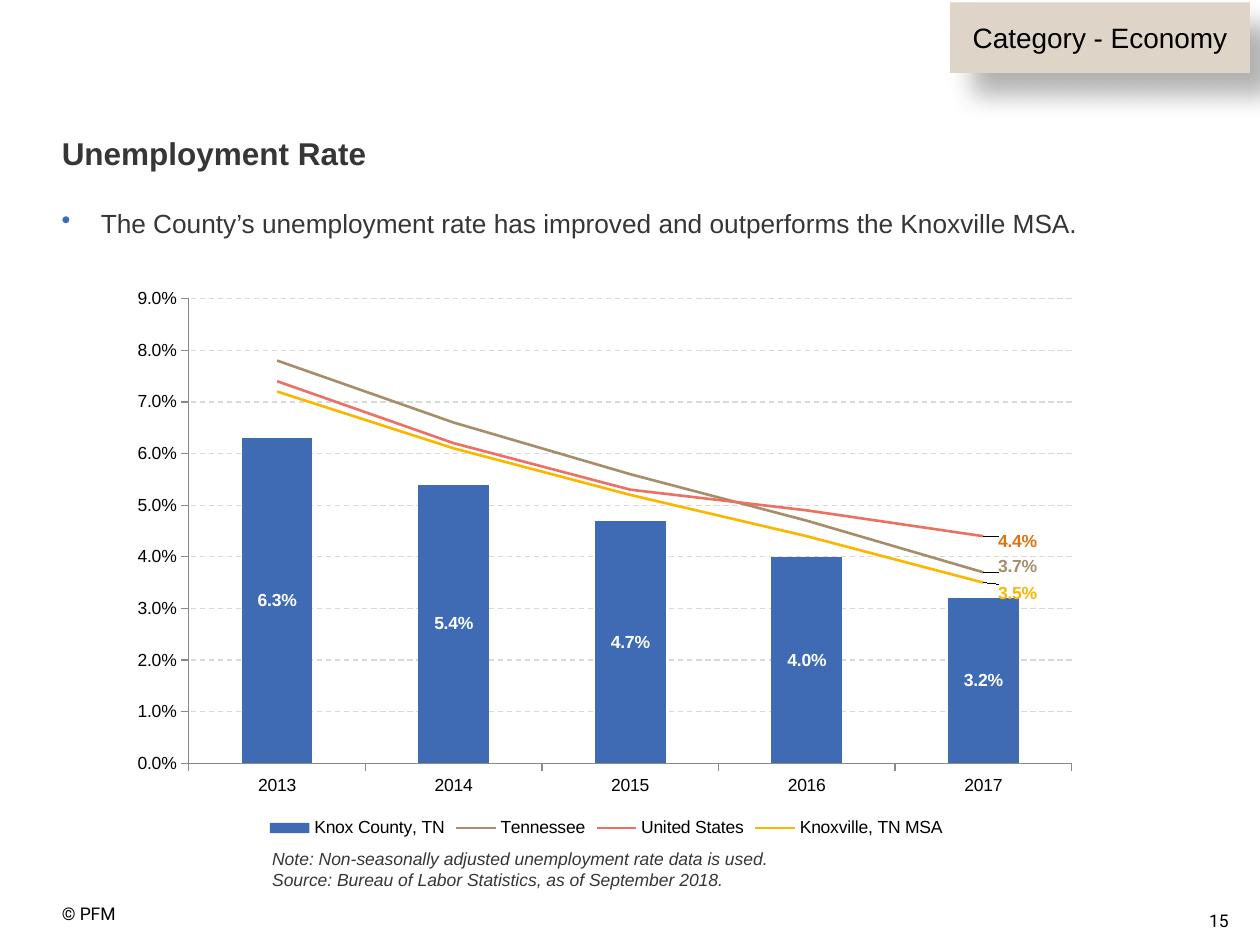
from dataclasses import dataclass

from lxml import etree
from pptx import Presentation
from pptx.chart.data import CategoryChartData
from pptx.dml.color import RGBColor
from pptx.enum.chart import XL_CHART_TYPE, XL_LABEL_POSITION, XL_LEGEND_POSITION, XL_TICK_MARK
from pptx.enum.dml import MSO_LINE
from pptx.enum.shapes import MSO_SHAPE
from pptx.enum.text import MSO_ANCHOR, PP_ALIGN
from pptx.oxml import parse_xml
from pptx.oxml.ns import nsdecls, qn
from pptx.util import Emu, Inches, Pt

STACKED = XL_CHART_TYPE.COLUMN_STACKED
LABEL_CENTER, LABEL_RIGHT = XL_LABEL_POSITION.CENTER, XL_LABEL_POSITION.RIGHT
LEGEND_BOTTOM = XL_LEGEND_POSITION.BOTTOM
TICK_OUTSIDE = XL_TICK_MARK.OUTSIDE
DASH = MSO_LINE.DASH
RECTANGLE = MSO_SHAPE.RECTANGLE
TOP, MIDDLE = MSO_ANCHOR.TOP, MSO_ANCHOR.MIDDLE
LEFT, CENTER, RIGHT = PP_ALIGN.LEFT, PP_ALIGN.CENTER, PP_ALIGN.RIGHT

BLACK = RGBColor(0x00, 0x00, 0x00)
WHITE = RGBColor(0xFF, 0xFF, 0xFF)
INK = RGBColor(0x37, 0x36, 0x37)
BLUE = RGBColor(0x3E, 0x6B, 0xB4)
TAN = RGBColor(0xA6, 0x8E, 0x6A)
CORAL = RGBColor(0xEA, 0x71, 0x63)
ORANGE = RGBColor(0xDE, 0x73, 0x0F)
YELLOW = RGBColor(0xFB, 0xB6, 0x00)
SAND = RGBColor(0xDE, 0xD5, 0xC8)
GRID_GREY = RGBColor(0xD9, 0xD9, 0xD9)
AXIS_GREY = RGBColor(0x89, 0x89, 0x89)

SLIDE_WIDTH, SLIDE_HEIGHT = Inches(10), Inches(7.5)
COLUMNS, ROWS = 100, 75
MARGIN = 4.9
PERCENT = "0.0%"


@dataclass(frozen=True)
class Area:
    """A place on the slide, in grid columns and rows."""
    column: float
    row: float
    columns: float
    rows: float

    def emu(self) -> tuple:
        across, down = SLIDE_WIDTH / COLUMNS, SLIDE_HEIGHT / ROWS
        return (Emu(round(self.column * across)), Emu(round(self.row * down)),
                Emu(round(self.columns * across)), Emu(round(self.rows * down)))


@dataclass(frozen=True)
class TextBlock:
    area: Area
    lines: tuple
    font: dict
    insets: tuple = (0, 0, 0, 0)
    align: PP_ALIGN = LEFT
    wrap: bool = True
    spacing: float = 1.0
    bullet: bool = False


@dataclass(frozen=True)
class Rate:
    name: str
    values: tuple
    color: RGBColor
    label_color: RGBColor
    label_shift: tuple = (0, 0)


def text_font(size: float, color: RGBColor = INK, name: str = "Arial", **extra) -> dict:
    return {"name": name, "size": Pt(size), "color": color, **extra}


def apply_font(font, values: dict) -> None:
    for key, value in values.items():
        if key == "color":
            font.color.rgb = value
        else:
            setattr(font, key, value)


YEARS = ("2013", "2014", "2015", "2016", "2017")
COUNTY = Rate("Knox County, TN", (0.063, 0.054, 0.047, 0.04, 0.032), BLUE, WHITE)
COMPARISONS = (
    Rate("Tennessee", (0.078, 0.066, 0.056, 0.047, 0.037), TAN, TAN, (0.01, -0.01)),
    Rate("United States", (0.074, 0.062, 0.053, 0.049, 0.044), CORAL, ORANGE, (0.01, 0.01)),
    Rate("Knoxville, TN MSA", (0.072, 0.061, 0.052, 0.044, 0.035), YELLOW, YELLOW, (0.01, 0.02)),
)
TEXTS = (
    TextBlock(Area(MARGIN, 71.7, 13.9, 2.7), ("© PFM",),
              text_font(10, BLACK, "Roboto"), wrap=False),
    TextBlock(Area(68.5, 71.7, 30, 4), ("15",), text_font(10, BLACK, "Roboto"),
              insets=(0.1, 0.05, 0.1, 0.05), align=RIGHT),
    TextBlock(Area(MARGIN, 11, 86.2, 2.8), ("Unemployment Rate",),
              text_font(18, bold=True), spacing=0.9),
    TextBlock(Area(20.7, 66.9, 93.8, 4.3),
              ("Note: Non-seasonally adjusted unemployment rate data is used.",
               "Source: Bureau of Labor Statistics, as of September 2018."),
              text_font(10, italic=True), insets=(0.09, 0.04, 0.09, 0.04)),
    TextBlock(Area(MARGIN, 16, 86.7, 45),
              ("The County’s unemployment rate has improved and outperforms the Knoxville MSA.",),
              text_font(15), insets=(0, 0.05, 0.1, 0.05), bullet=True),
)


def add_bullet(paragraph) -> None:
    properties = paragraph._p.get_or_add_pPr()
    indent = Inches(0.31)
    properties.set("marL", str(indent))
    properties.set("indent", str(-indent))
    color = etree.SubElement(properties, qn("a:buClr"))
    etree.SubElement(color, qn("a:srgbClr"), val=str(BLUE))
    etree.SubElement(properties, qn("a:buChar"), char="•")


def fill_frame(frame, block: TextBlock, anchor: MSO_ANCHOR = TOP) -> None:
    sides = ("left", "top", "right", "bottom")
    for side, inset in zip(sides, block.insets):
        setattr(frame, f"margin_{side}", Inches(inset))
    frame.word_wrap = block.wrap
    frame.vertical_anchor = anchor
    for number, line in enumerate(block.lines):
        paragraph = frame.add_paragraph() if number else frame.paragraphs[0]
        paragraph.alignment = block.align
        paragraph.line_spacing = block.spacing
        if block.bullet:
            add_bullet(paragraph)
        run = paragraph.add_run()
        run.text = line
        apply_font(run.font, block.font)


def add_category_tag(slide, block: TextBlock) -> None:
    tag = slide.shapes.add_shape(RECTANGLE, *block.area.emu())
    tag.fill.solid()
    tag.fill.fore_color.rgb = SAND
    tag.line.fill.background()
    tag.shadow.inherit = False
    effects = tag._element.spPr.find(qn("a:effectLst"))
    shadow = etree.SubElement(effects, qn("a:outerShdw"), blurRad=str(Pt(15)),
                              dist=str(Pt(18)), dir=str(45 * 60000))
    color = etree.SubElement(shadow, qn("a:srgbClr"), val=str(BLACK))
    etree.SubElement(color, qn("a:alpha"), val="30000")
    fill_frame(tag.text_frame, block, MIDDLE)


def manual_layout(**values):
    """Make a chart layout whose numbers are shares of the chart's size."""
    items = "".join(f'<c:{key} val="{value}"/>' for key, value in values.items())
    return parse_xml(f'<c:layout {nsdecls("c")}><c:manualLayout>{items}'
                     "</c:manualLayout></c:layout>")


def move_comparisons_to_lines(chart) -> None:
    """Put every series after the first in a line plot on the same axes."""
    bars = chart.plots[0]._element
    lines = parse_xml(f'<c:lineChart {nsdecls("c")}><c:grouping val="standard"/>'
                      '<c:varyColors val="0"/></c:lineChart>')
    for series in bars.findall(qn("c:ser"))[1:]:
        for bar_setting in series.findall(qn("c:invertIfNegative")):
            series.remove(bar_setting)
        lines.append(series)
    etree.SubElement(lines, qn("c:marker"), val="1")
    for axis in bars.findall(qn("c:axId")):
        etree.SubElement(lines, qn("c:axId"), val=axis.get("val"))
    bars.addnext(lines)


def style_line(series, rate: Rate) -> None:
    series.smooth = False
    series.format.line.color.rgb = rate.color
    series.format.line.width = Pt(1.5)
    marker = series._element.get_or_add_marker()
    marker.get_or_add_symbol().set("val", "none")
    series.data_labels.show_value = False
    label = series.points[len(YEARS) - 1].data_label
    apply_font(label.font, text_font(10, rate.label_color, bold=True))
    label.position = LABEL_RIGHT
    shift_x, shift_y = rate.label_shift
    index = label._get_or_add_dLbl().find(qn("c:idx"))
    index.addnext(manual_layout(x=shift_x, y=shift_y))


def add_rate_chart(slide, area: Area) -> None:
    data = CategoryChartData(number_format=PERCENT)
    data.categories = YEARS
    for rate in (COUNTY, *COMPARISONS):
        data.add_series(rate.name, rate.values)
    chart = slide.shapes.add_chart(STACKED, *area.emu(), data).chart
    apply_font(chart.font, text_font(10, BLACK))
    chart.has_title = False
    chart.has_legend = True
    chart.legend.position = LEGEND_BOTTOM
    chart.legend.include_in_layout = False
    for axis in (chart.category_axis, chart.value_axis):
        axis.major_tick_mark = TICK_OUTSIDE
        axis.format.line.color.rgb = AXIS_GREY
    values = chart.value_axis
    values.minimum_scale, values.maximum_scale, values.major_unit = 0, 0.09, 0.01
    values.tick_labels.number_format = PERCENT
    values.tick_labels.number_format_is_linked = False
    grid = values.major_gridlines.format.line
    grid.color.rgb, grid.width, grid.dash_style = GRID_GREY, Pt(0.75), DASH

    move_comparisons_to_lines(chart)
    bars, lines = chart.plots
    bars.gap_width, bars.overlap, bars.vary_by_categories = 150, 100, False
    county = bars.series[0]
    county.format.fill.solid()
    county.format.fill.fore_color.rgb = COUNTY.color
    labels = county.data_labels
    labels.show_value, labels.position = True, LABEL_CENTER
    apply_font(labels.font, text_font(10, COUNTY.label_color, bold=True))
    for series, rate in zip(lines.series, COMPARISONS):
        style_line(series, rate)

    plot_area = bars._element.getparent()
    for layout in plot_area.findall(qn("c:layout")):
        plot_area.remove(layout)
    plot_area.insert(0, manual_layout(layoutTarget="inner", xMode="edge", yMode="edge",
                                      x=0.07, y=0.04, w=0.91, h=0.82))


def main() -> None:
    deck = Presentation()
    deck.slide_width, deck.slide_height = SLIDE_WIDTH, SLIDE_HEIGHT
    slide = deck.slides.add_slide(deck.slide_layouts[6])
    add_rate_chart(slide, Area(9.6, 21.9, 77, 45))
    for block in TEXTS:
        fill_frame(slide.shapes.add_textbox(*block.area.emu()).text_frame, block)
    add_category_tag(slide, TextBlock(Area(75.4, 0.2, 23.8, 5.6), ("Category - Economy",),
                                      text_font(16, BLACK), align=CENTER))
    deck.save("out.pptx")


if __name__ == "__main__":
    main()
